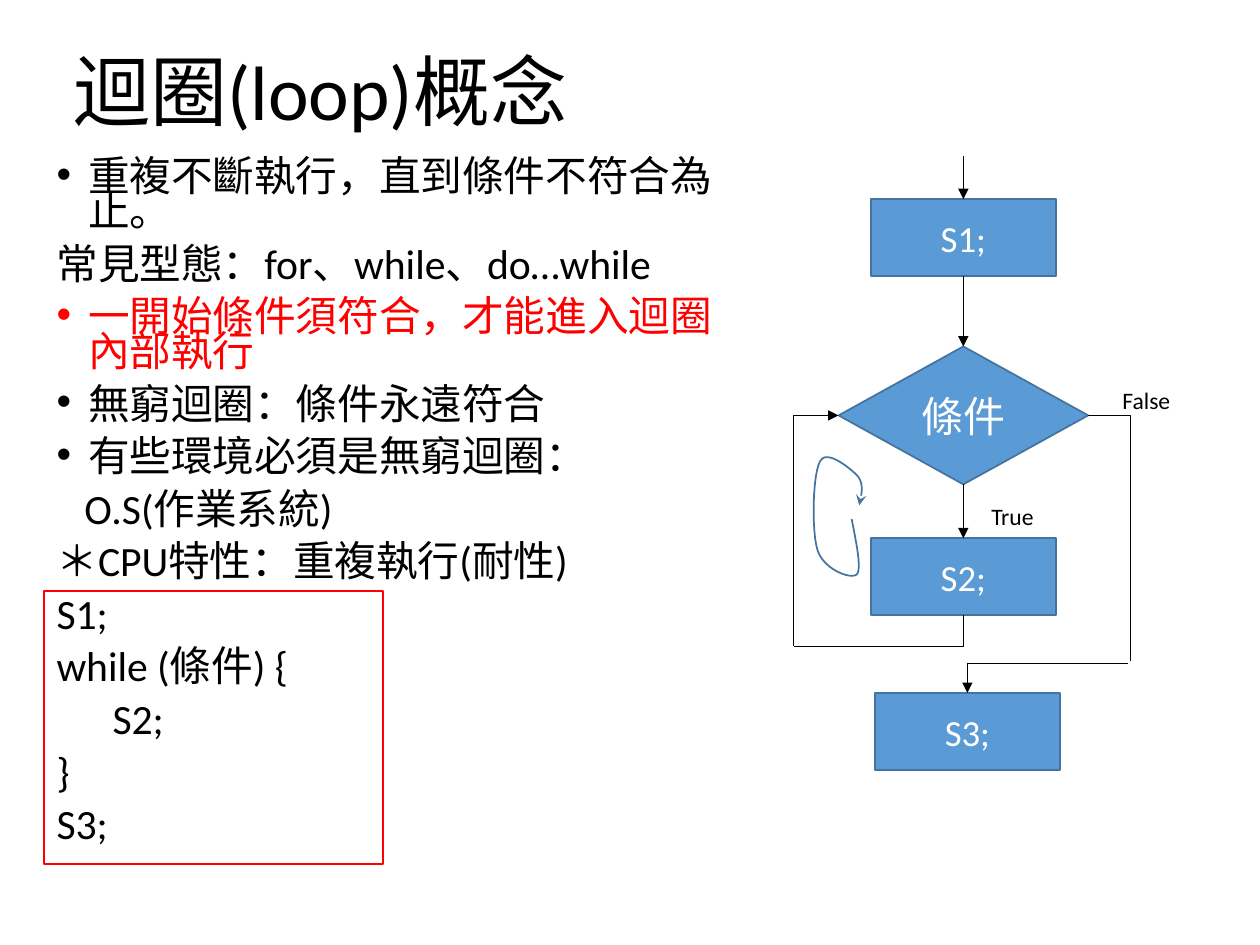
from pptx import Presentation
from pptx.util import Pt
from pptx.dml.color import RGBColor
from pptx.enum.shapes import MSO_SHAPE, MSO_CONNECTOR
from pptx.enum.text import PP_ALIGN, MSO_ANCHOR
from pptx.oxml.ns import qn
from lxml.etree import SubElement

BLACK = RGBColor(0, 0, 0)
WHITE = RGBColor(255, 255, 255)
RED = RGBColor(255, 0, 0)
BLUE = RGBColor(0x5B, 0x9B, 0xD5)
EDGE = RGBColor(0x43, 0x73, 0x9E)


def style(par, size, color):
    for run in par.runs:
        run.font.name = "Calibri"
        run.font.size = Pt(size)
        run.font.color.rgb = color


def link(kind, x1, y1, x2, y2, arrow=None):
    line = slide.shapes.add_connector(kind, Pt(x1), Pt(y1), Pt(x2), Pt(y2))
    line.line.color.rgb = BLACK
    line.line.width = Pt(0.5)
    if arrow:
        SubElement(line.line._get_or_add_ln(), qn(arrow), type="triangle")
    SubElement(line._element.spPr, qn("a:effectLst"))
    return line


deck = Presentation()
deck.slide_width, deck.slide_height = Pt(720), Pt(540)
slide = deck.slides.add_slide(deck.slide_layouts[5])

title = slide.shapes.title
title.left, title.top, title.width, title.height = Pt(34.6), Pt(2.2), Pt(620.6), Pt(104.4)
title.text_frame.text = "迴圈(loop)概念"
title.text_frame.vertical_anchor = MSO_ANCHOR.MIDDLE
head = title.text_frame.paragraphs[0]
head.alignment = PP_ALIGN.LEFT
head.line_spacing = 0.9
style(head, 44, BLACK)

body = slide.shapes.add_textbox(Pt(25.2), Pt(90), Pt(409), Pt(404)).text_frame
body.word_wrap = True
rows = [
    ("重複不斷執行，直到條件不符合為止。", True, 18, BLACK),
    ("常見型態：for、while、do…while", False, 0, BLACK),
    ("一開始條件須符合，才能進入迴圈內部執行", True, 18, RED),
    ("無窮迴圈：條件永遠符合", True, 18, BLACK),
    ("有些環境必須是無窮迴圈：", True, 18, BLACK),
    ("O.S(作業系統)", False, 16, BLACK),
    ("＊CPU特性：重複執行(耐性)", False, 0, BLACK),
    ("S1;", False, 0, BLACK),
    ("while (條件) {", False, 0, BLACK),
    ("S2;", False, 32, BLACK),
    ("}", False, 0, BLACK),
    ("S3;", False, 0, BLACK),
]
for i, (text, dot, left, color) in enumerate(rows):
    par = body.paragraphs[0] if i == 0 else body.add_paragraph()
    par.text = text
    par.line_spacing = 0.7
    par.space_before = Pt(10)
    style(par, 23.8, color)
    props = par._p.get_or_add_pPr()
    props.set("marL", str(Pt(left)))
    props.set("indent", str(Pt(-18 if dot else 0)))
    if dot:
        SubElement(props, qn("a:buFont"), typeface="Arial")
        SubElement(props, qn("a:buChar"), char="•")

box = MSO_SHAPE.FLOWCHART_PROCESS
steps = []
for kind, text, x, y, w, h, size in [
    (box, "S1;", 497.5, 113.8, 106, 44, 21),
    (MSO_SHAPE.FLOWCHART_DECISION, "條件", 479.2, 198, 142.6, 78.8, 24),
    (box, "S2;", 497.5, 307.6, 106, 44, 21),
    (box, "S3;", 499.8, 396, 106, 44, 21),
]:
    step = slide.shapes.add_shape(kind, Pt(x), Pt(y), Pt(w), Pt(h))
    step.shadow.inherit = False
    step.fill.solid()
    step.fill.fore_color.rgb = BLUE
    step.line.color.rgb = EDGE
    step.line.width = Pt(1)
    step.text_frame.text = text
    step.text_frame.vertical_anchor = MSO_ANCHOR.MIDDLE
    step.text_frame.paragraphs[0].alignment = PP_ALIGN.CENTER
    style(step.text_frame.paragraphs[0], size, WHITE)
    steps.append(step)

mid = 550.5
entry = link(MSO_CONNECTOR.STRAIGHT, mid, 89.3, mid, 113.8, "a:tailEnd")
entry.end_connect(steps[0], 0)
for above, below in zip(steps[:2], steps[1:3]):
    flow = link(MSO_CONNECTOR.STRAIGHT, mid, 0, mid, 10, "a:tailEnd")
    flow.begin_connect(above, 2)
    flow.end_connect(below, 0)

for x1, y1, x2, y2, arrow in [
    (453.6, 369.4, mid, 351.6, None),
    (479.2, 237.4, 453.6, 369.4, "a:headEnd"),
    (621.8, 237.4, 645.8, 378, None),
    (644.4, 379.4, 552.8, 396, "a:tailEnd"),
]:
    bend = link(MSO_CONNECTOR.ELBOW, x1, y1, x2, y2, arrow)
    bend._element.spPr.find(qn("a:prstGeom")).set("prst", "bentConnector2")

for text, x, y, w in [("True", 559.4, 283, 39), ("False", 634.3, 216.7, 42.5)]:
    label = slide.shapes.add_textbox(Pt(x), Pt(y), Pt(w), Pt(40)).text_frame
    label.word_wrap = False
    label.text = text
    style(label.paragraphs[0], 13.5, BLACK)

knots = [
    (6.76, 4.12), (6.8, 4.32), (6.84, 4.52), (6.8, 4.56), (6.75, 4.6),
    (6.54, 4.52), (6.49, 4.37), (6.44, 4.22), (6.45, 3.76), (6.51, 3.66),
    (6.56, 3.56), (6.75, 3.72), (6.8, 3.77), (6.86, 3.83), (6.84, 3.92),
    (6.82, 4.01),
]
curve = []
for i in range(0, len(knots) - 1, 3):
    for n in range(1, 13):
        t = n / 12
        parts = ((1 - t) ** 3, 3 * t * (1 - t) ** 2, 3 * t * t * (1 - t), t ** 3)
        curve.append(tuple(
            Pt(72 * sum(p * k[axis] for p, k in zip(parts, knots[i:i + 4])))
            for axis in (0, 1)
        ))
pen = slide.shapes.build_freeform(Pt(72 * knots[0][0]), Pt(72 * knots[0][1]))
pen.add_line_segments(curve, close=False)
loop = pen.convert_to_shape()
frame = slide.shapes.add_shape(MSO_SHAPE.RECTANGLE, Pt(25.2), Pt(337.7), Pt(193.7), Pt(156.2))
for shape, color in [(loop, EDGE), (frame, RED)]:
    shape.shadow.inherit = False
    shape.fill.background()
    shape.line.color.rgb = color
    shape.line.width = Pt(1)
SubElement(loop.line._get_or_add_ln(), qn("a:tailEnd"), type="stealth")

deck.save("out.pptx")
